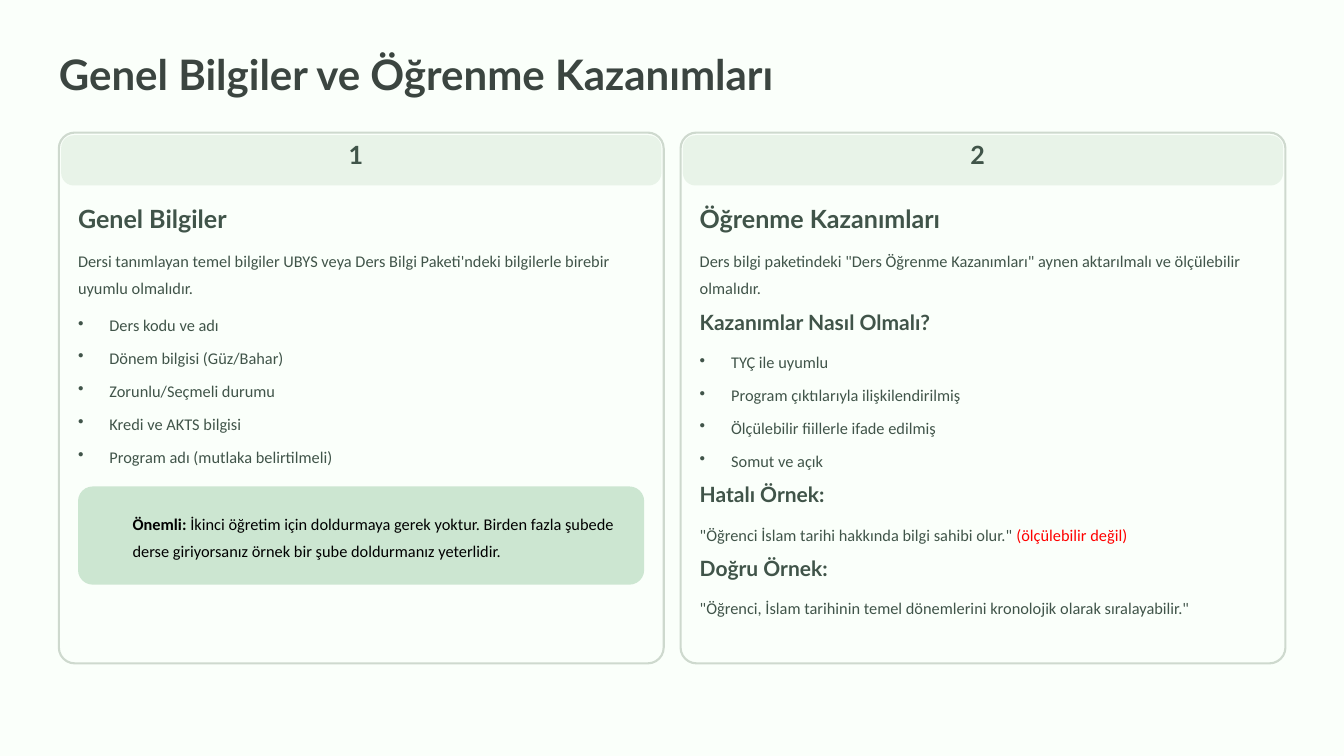
from dataclasses import dataclass

from lxml.etree import SubElement
from pptx import Presentation
from pptx.dml.color import RGBColor
from pptx.enum.shapes import MSO_SHAPE as Preset
from pptx.enum.text import MSO_ANCHOR as Anchor, MSO_AUTO_SIZE as AutoSize, PP_ALIGN as Align
from pptx.oxml.ns import qn
from pptx.slide import Slide
from pptx.text.text import TextFrame
from pptx.util import Cm, Pt


@dataclass(frozen=True)
class Style:
    font: str
    size: float
    leading: float
    color: str
    bold: bool = False


@dataclass(frozen=True)
class Theme:
    page: str = "FAFFFA"
    border: str = "CED9CE"
    band: str = "E8F3E8"
    callout: str = "CCE6D1"
    warning: str = "FF0000"
    title: Style = Style("Lato", 36, 45, "3B4540", True)
    number: Style = Style("Lato", 21.5, 21.5, "405449", True)
    heading: Style = Style("Lato", 21.5, 27, "405449", True)
    subheading: Style = Style("Lato", 18, 22.5, "405449", True)
    body: Style = Style("Calibri", 14, 23, "405449")
    note: Style = Style("Calibri", 14, 23, "000000")


THEME = Theme()


@dataclass(frozen=True)
class Box:
    left: float
    top: float
    width: float
    height: float

    def lengths(self) -> tuple[Cm, Cm, Cm, Cm]:
        return Cm(self.left), Cm(self.top), Cm(self.width), Cm(self.height)


@dataclass(frozen=True)
class Run:
    text: str
    bold: bool | None = None
    color: str | None = None


@dataclass(frozen=True)
class Block:
    """Text inside a card; every line is one paragraph of runs."""
    top: float
    height: float
    style: Style
    lines: list[list[Run]]
    bulleted: bool = False


@dataclass(frozen=True)
class Card:
    number: str
    blocks: list[Block]


def heading(text: str) -> Block:
    return Block(6.12, 0.97, THEME.heading, [[Run(text)]])


def subheading(top: float, text: str) -> Block:
    return Block(top, 0.79, THEME.subheading, [[Run(text)]])


def body(top: float, height: float, *runs: Run) -> Block:
    return Block(top, height, THEME.body, [list(runs)])


def bullets(top: float, *items: str) -> Block:
    return Block(top, len(items) * 0.99, THEME.body, [[Run(item)] for item in items], True)


CARDS = [
    Card("1", [
        heading("Genel Bilgiler"),
        body(7.39, 1.63, Run("Dersi tanımlayan temel bilgiler UBYS veya Ders Bilgi Paketi'ndeki "
                             "bilgilerle birebir uyumlu olmalıdır.")),
        bullets(9.32, "Ders kodu ve adı", "Dönem bilgisi (Güz/Bahar)", "Zorunlu/Seçmeli durumu",
                "Kredi ve AKTS bilgisi", "Program adı (mutlaka belirtilmeli)"),
    ]),
    Card("2", [
        heading("Öğrenme Kazanımları"),
        body(7.39, 1.63, Run('Ders bilgi paketindeki "Ders Öğrenme Kazanımları" aynen '
                             "aktarılmalı ve ölçülebilir olmalıdır.")),
        subheading(9.32, "Kazanımlar Nasıl Olmalı?"),
        bullets(10.44, "TYÇ ile uyumlu", "Program çıktılarıyla ilişkilendirilmiş",
                "Ölçülebilir fiillerle ifade edilmiş", "Somut ve açık"),
        subheading(14.53, "Hatalı Örnek:"),
        body(15.65, 0.81, Run('"Öğrenci İslam tarihi hakkında bilgi sahibi olur." '),
             Run("(ölçülebilir değil)", color=THEME.warning)),
        subheading(16.76, "Doğru Örnek:"),
        body(17.86, 1.63, Run('"Öğrenci, İslam tarihinin temel dönemlerini kronolojik olarak '
                              'sıralayabilir."')),
    ]),
]
NOTE = [Run("Önemli: ", bold=True),
        Run("İkinci öğretim için doldurmaya gerek yoktur. Birden fazla şubede derse "
            "giriyorsanız örnek bir şube doldurmanız yeterlidir.")]

CARD_LEFT, CARD_TOP, CARD_WIDTH, CARD_HEIGHT = 1.78, 4.01, 18.29, 16.05
CARD_PITCH = 18.8
PADDING, INNER_WIDTH = 0.58, 17.12


def write(frame: TextFrame, lines: list[list[Run]], style: Style, bulleted: bool = False) -> None:
    frame.word_wrap = True
    frame.auto_size = AutoSize.NONE
    frame.vertical_anchor = Anchor.TOP
    frame.margin_left = frame.margin_top = frame.margin_right = frame.margin_bottom = 0
    for index, runs in enumerate(lines):
        paragraph = frame.add_paragraph() if index else frame.paragraphs[0]
        if bulleted:
            properties = paragraph._p.get_or_add_pPr()
            properties.set("marL", str(Cm(0.95)))
            properties.set("indent", str(-Cm(0.95)))
            SubElement(properties, qn("a:buChar")).set("char", "•")
        paragraph.alignment = Align.LEFT
        paragraph.line_spacing = Pt(style.leading)
        paragraph.space_before = Pt(5.25 if index else 0)
        for part in runs:
            run = paragraph.add_run()
            run.text = part.text
            run.font.name = style.font
            run.font.size = Pt(style.size)
            run.font.bold = style.bold if part.bold is None else part.bold
            run.font.color.rgb = RGBColor.from_string(part.color or style.color)


def add_text(slide: Slide, box: Box, lines: list[list[Run]], style: Style,
             bulleted: bool = False) -> None:
    write(slide.shapes.add_textbox(*box.lengths()).text_frame, lines, style, bulleted)


def add_panel(slide: Slide, box: Box, rounding: float, fill: str,
              border: str | None = None) -> None:
    panel = slide.shapes.add_shape(Preset.ROUNDED_RECTANGLE, *box.lengths())
    panel.shadow.inherit = False
    panel.adjustments[0] = rounding
    panel.fill.solid()
    panel.fill.fore_color.rgb = RGBColor.from_string(fill)
    if border:
        panel.line.color.rgb = RGBColor.from_string(border)
        panel.line.width = Pt(1.8)
    else:
        panel.line.fill.background()


def add_card(slide: Slide, card: Card, left: float) -> None:
    add_panel(slide, Box(left, CARD_TOP, CARD_WIDTH, CARD_HEIGHT), 0.03, THEME.page, THEME.border)
    add_panel(slide, Box(left + 0.07, CARD_TOP + 0.08, 18.15, 1.52), 0.25, THEME.band)
    add_text(slide, Box(left + 8.76, 4.37, 0.76, 0.97), [[Run(card.number)]], THEME.number)
    for block in card.blocks:
        box = Box(left + PADDING, block.top, INNER_WIDTH, block.height)
        add_text(slide, box, block.lines, block.style, block.bulleted)


def main() -> None:
    deck = Presentation()
    deck.slide_width, deck.slide_height = Cm(40.64), Cm(22.86)
    slide = deck.slides.add_slide(deck.slide_layouts[5])
    slide.background.fill.solid()
    slide.background.fill.fore_color.rgb = RGBColor.from_string(THEME.page)

    # Title
    title = slide.shapes.title
    title.left, title.top, title.width, title.height = Box(1.78, 1.4, 25.1, 1.6).lengths()
    write(title.text_frame, [[Run("Genel Bilgiler ve Öğrenme Kazanımları")]], THEME.title)

    # Numbered cards
    for index, card in enumerate(CARDS):
        add_card(slide, card, CARD_LEFT + index * CARD_PITCH)

    # Important note in the first card
    add_panel(slide, Box(CARD_LEFT + PADDING, 14.71, INNER_WIDTH, 2.97), 0.15, THEME.callout)
    add_text(slide, Box(4.01, 15.34, 14.96, 2.24), [NOTE], THEME.note)

    deck.save("out.pptx")


if __name__ == "__main__":
    main()
